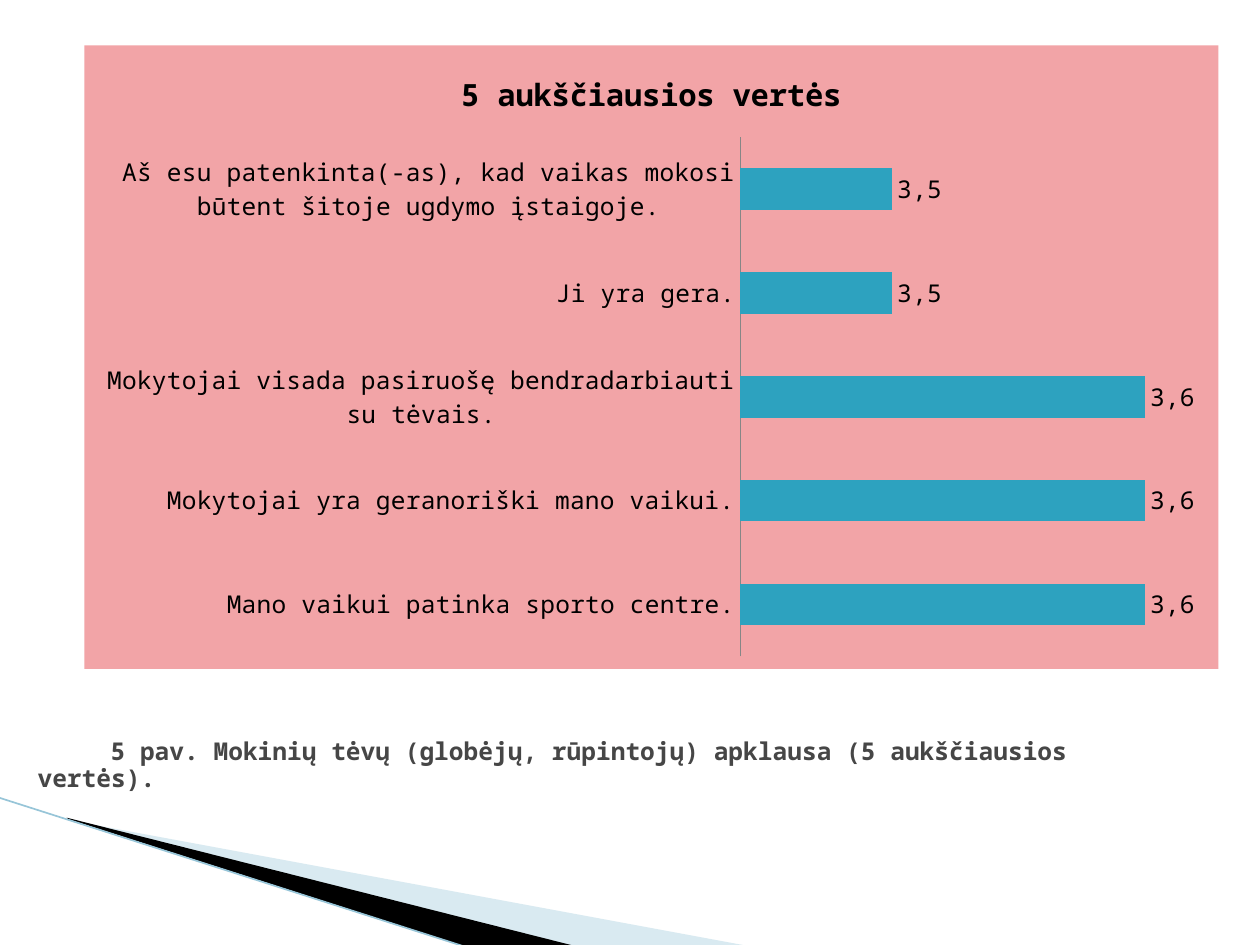
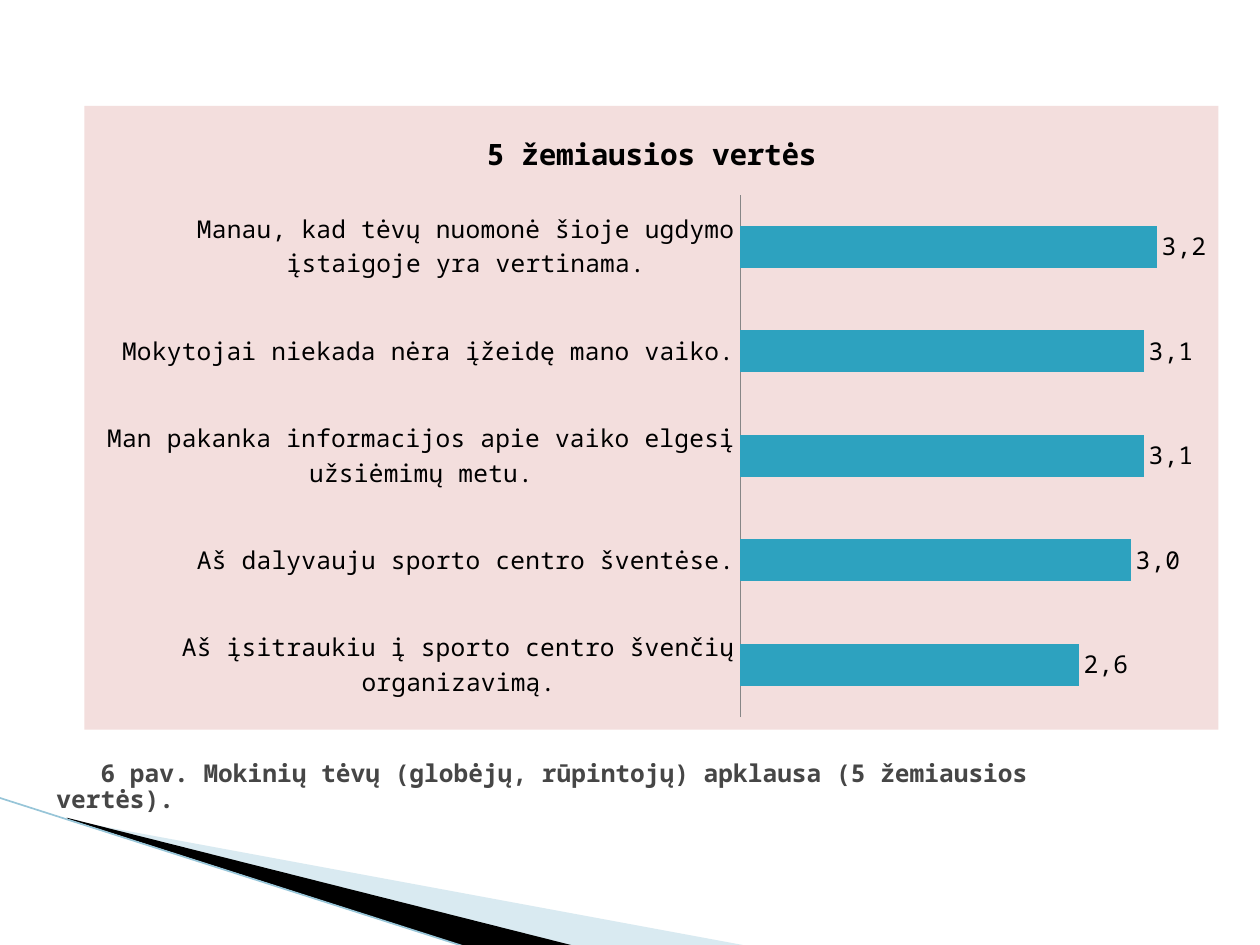
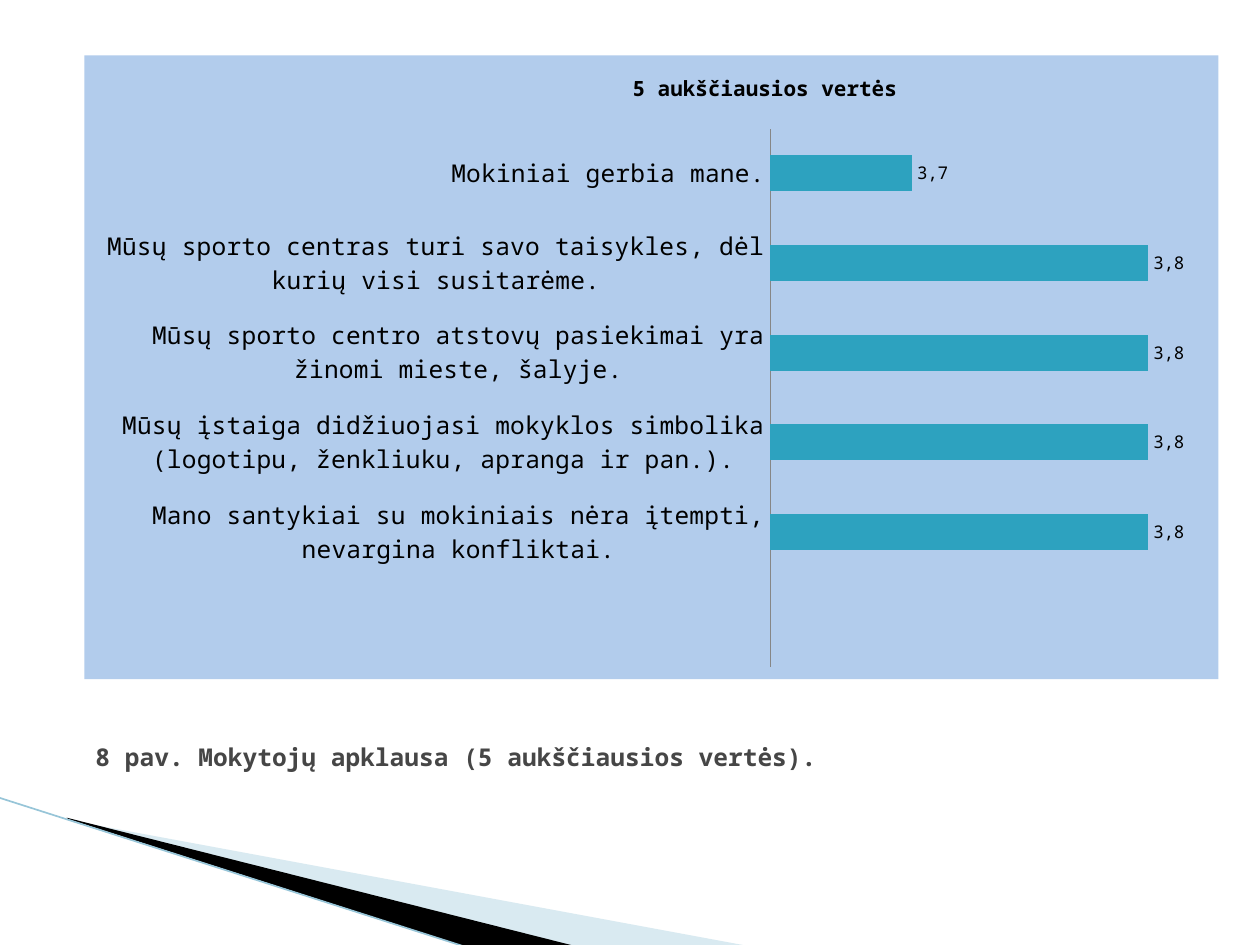
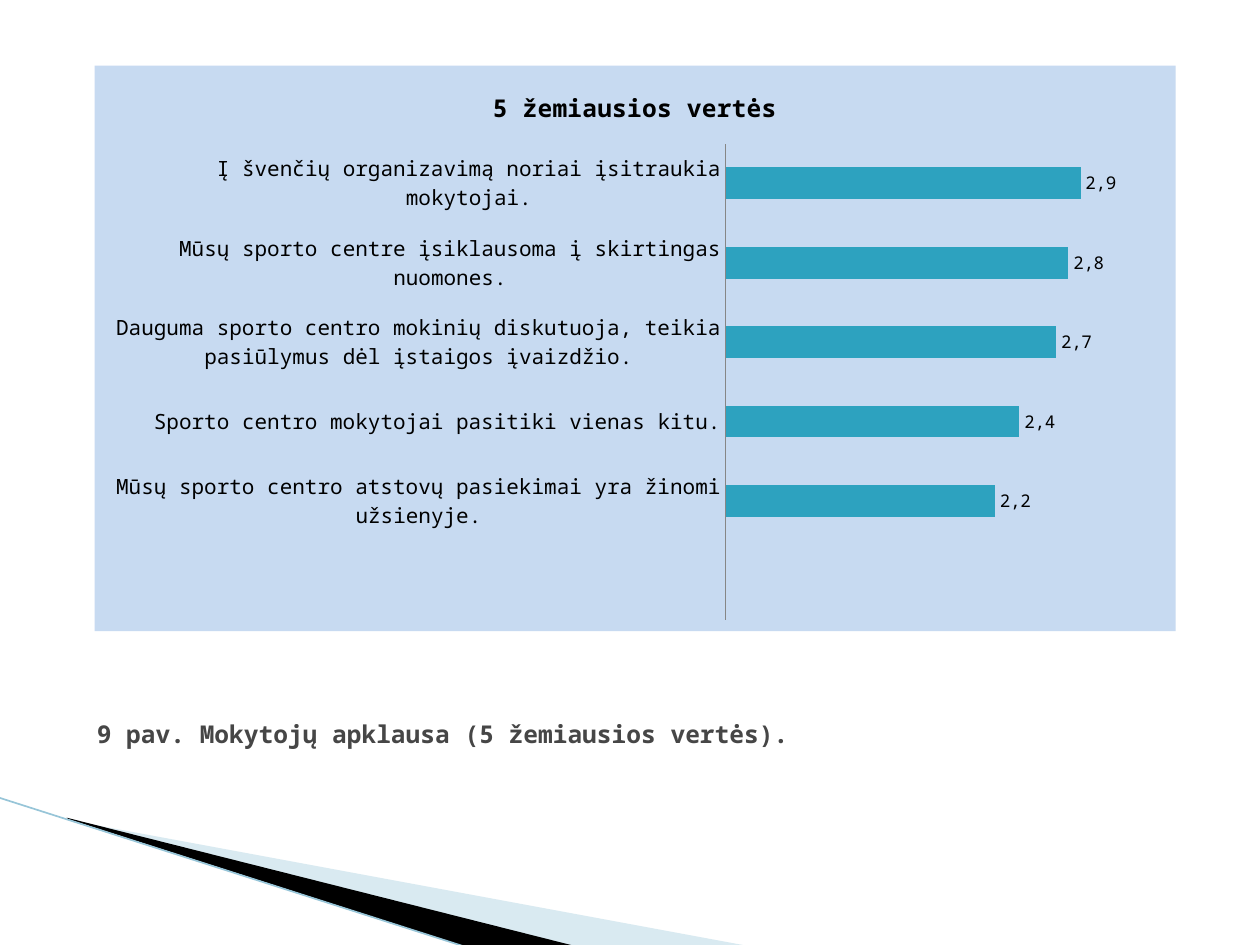
from pptx import Presentation
from pptx.chart.data import CategoryChartData
from pptx.dml.color import RGBColor
from pptx.enum.chart import XL_CHART_TYPE, XL_LABEL_POSITION, XL_TICK_MARK
from pptx.enum.shapes import MSO_CONNECTOR
from pptx.enum.text import MSO_ANCHOR
from pptx.oxml import parse_xml
from pptx.oxml.ns import nsdecls, qn
from pptx.util import Inches, Pt
from lxml.etree import SubElement

FONT = "Noto Sans Mono"
BLACK = RGBColor(0x00, 0x00, 0x00)
CAPTION_GREY = RGBColor(0x46, 0x46, 0x46)
AXIS_GREY = RGBColor(0x86, 0x86, 0x86)
BAR_TEAL = RGBColor(0x2D, 0xA2, 0xBF)
WEDGE_BLUE = RGBColor(0xA0, 0xCB, 0xDC)
EDGE_BLUE = RGBColor(0x97, 0xC5, 0xD8)
ROSE = RGBColor(0xF2, 0xA4, 0xA7)
PALE_ROSE = RGBColor(0xF3, 0xDE, 0xDD)
SKY = RGBColor(0xB2, 0xCC, 0xEC)
PALE_SKY = RGBColor(0xC7, 0xDA, 0xF1)

HIGHEST = "5 aukščiausios vertės"
LOWEST = "5 žemiausios vertės"

surveys = [
    dict(
        title=HIGHEST, title_size=17.5, title_place=None,
        chart_box=(0.67, 0.36, 9, 4.95), background=ROSE,
        answer_size=14, score_size=14, score_format="0.00%", scale=(0.0344, 0.0362),
        answers=[
            ("Mano vaikui patinka sporto centre.", 0.036),
            ("Mokytojai yra geranoriški mano vaikui.", 0.036),
            ("Mokytojai visada pasiruošę bendradarbiauti su tėvais.", 0.036),
            ("Ji yra gera.", 0.035),
            ("Aš esu patenkinta(-as), kad vaikas mokosi būtent šitoje ugdymo įstaigoje.", 0.035),
        ],
        caption="5 pav. Mokinių tėvų (globėjų, rūpintojų) apklausa (5 aukščiausios vertės).",
        caption_box=(0.2, 5.72, 9, 1.25), caption_indent=0.58, caption_lift=0.58,
    ),
    dict(
        title=LOWEST, title_size=16.8, title_place=None,
        chart_box=(0.67, 0.84, 9, 4.95), background=PALE_ROSE,
        answer_size=14, score_size=14, score_format="0%", scale=(0, 0.035),
        answers=[
            ("Aš įsitraukiu į sporto centro švenčių organizavimą.", 0.026),
            ("Aš dalyvauju sporto centro šventėse.", 0.030),
            ("Man pakanka informacijos apie vaiko elgesį užsiėmimų metu.", 0.031),
            ("Mokytojai niekada nėra įžeidę mano vaiko.", 0.031),
            ("Manau, kad tėvų nuomonė šioje ugdymo įstaigoje yra vertinama.", 0.032),
        ],
        caption="6 pav. Mokinių tėvų (globėjų, rūpintojų) apklausa (5 žemiausios vertės).",
        caption_box=(0.35, 5.95, 9, 1.25), caption_indent=0.35, caption_lift=0.7,
    ),
    dict(
        title=HIGHEST, title_size=12, title_place=(0.48, 0.02),
        chart_box=(0.67, 0.44, 9, 4.95), background=SKY,
        answer_size=14, score_size=10, score_format="0.00%", scale=(0.0364, 0.0382),
        answers=[
            ("", None),
            ("Mano santykiai su mokiniais nėra įtempti, nevargina konfliktai.", 0.038),
            ("Mūsų įstaiga didžiuojasi mokyklos simbolika (logotipu, ženkliuku, apranga ir pan.).", 0.038),
            ("Mūsų sporto centro atstovų pasiekimai yra žinomi mieste, šalyje.", 0.038),
            ("Mūsų sporto centras turi savo taisykles, dėl kurių visi susitarėme.", 0.038),
            ("Mokiniai gerbia mane.", 0.037),
        ],
        caption="8 pav. Mokytojų apklausa (5 aukščiausios vertės).",
        caption_box=(0.43, 5.72, 9, 1.25), caption_indent=0.23, caption_lift=0.7,
    ),
    dict(
        title=LOWEST, title_size=14, title_place=None,
        chart_box=(0.75, 0.52, 8.58, 4.49), background=PALE_SKY,
        answer_size=12, score_size=10, score_format="0.00%", scale=(0, 0.035),
        answers=[
            ("", None),
            ("Mūsų sporto centro atstovų pasiekimai yra žinomi užsienyje.", 0.022),
            ("Sporto centro mokytojai pasitiki vienas kitu.", 0.024),
            ("Dauguma sporto centro mokinių diskutuoja, teikia pasiūlymus dėl įstaigos įvaizdžio.", 0.027),
            ("Mūsų sporto centre įsiklausoma į skirtingas nuomones.", 0.028),
            ("Į švenčių organizavimą noriai įsitraukia mokytojai.", 0.029),
        ],
        caption="9 pav. Mokytojų apklausa (5 žemiausios vertės).",
        caption_box=(0.67, 5.25, 9, 1.41), caption_indent=0, caption_lift=0.28,
    ),
]


def style_font(font, size, color=BLACK, bold=False):
    font.name = FONT
    font.size = Pt(size)
    font.bold = bold
    font.color.rgb = color


prs = Presentation()
prs.slide_width = Inches(10)
prs.slide_height = Inches(7.5)
blank = prs.slide_layouts[6]
slides = [prs.slides.add_slide(blank) for _ in surveys]

wedges = [
    (WEDGE_BLUE, 40, [(0.55, 6.51), (5.95, 7.51), (4.56, 7.51), (0.55, 6.5)]),
    (BLACK, 100, [(0.53, 6.49), (4.57, 7.51), (3.72, 7.52), (0.54, 6.5)]),
]
for color, opacity, corners in wedges:
    points = [(Inches(x), Inches(y)) for x, y in corners]
    builder = slides[0].shapes.build_freeform(*points[0])
    builder.add_line_segments(points[1:], close=True)
    wedge = builder.convert_to_shape()
    wedge.shadow.inherit = False
    wedge.fill.solid()
    wedge.fill.fore_color.rgb = color
    wedge.line.fill.background()
    if opacity < 100:
        tint = wedge.element.spPr.find(qn("a:solidFill"))[0]
        SubElement(tint, qn("a:alpha"), val=str(opacity * 1000))
    blank.shapes.element.append(wedge.element)

edge = slides[0].shapes.add_connector(
    MSO_CONNECTOR.STRAIGHT, Inches(-0.01), Inches(6.33), Inches(3.71), Inches(7.52))
edge.line.color.rgb = EDGE_BLUE
edge.line.width = Pt(0.95)
SubElement(edge.element.spPr, qn("a:effectLst"))
blank.shapes.element.append(edge.element)

for slide, survey in zip(slides, surveys):
    scores = [score for _, score in survey["answers"]]
    data = CategoryChartData(number_format=survey["score_format"])
    data.categories = [answer for answer, _ in survey["answers"]]
    data.add_series("Series 1", scores)
    chart = slide.shapes.add_chart(
        XL_CHART_TYPE.BAR_CLUSTERED, *map(Inches, survey["chart_box"]), data).chart
    style_font(chart.font, survey["score_size"])
    chart.has_legend = False
    chart.element.find(qn("c:txPr")).addprevious(parse_xml(
        f'<c:spPr {nsdecls("c", "a")}><a:solidFill><a:srgbClr val="{survey["background"]}"/>'
        '</a:solidFill><a:ln><a:noFill/></a:ln></c:spPr>'))

    chart.has_title = True
    heading = chart.chart_title.text_frame.paragraphs[0].add_run()
    heading.text = survey["title"]
    style_font(heading.font, survey["title_size"], bold=True)
    if survey["title_place"]:
        x, y = survey["title_place"]
        chart.chart_title.element.find(qn("c:layout")).append(parse_xml(
            f'<c:manualLayout {nsdecls("c")}><c:xMode val="edge"/><c:yMode val="edge"/>'
            f'<c:x val="{x}"/><c:y val="{y}"/></c:manualLayout>'))

    answer_axis = chart.category_axis
    answer_axis.major_tick_mark = XL_TICK_MARK.NONE
    answer_axis.format.line.color.rgb = AXIS_GREY
    style_font(answer_axis.tick_labels.font, survey["answer_size"])
    score_axis = chart.value_axis
    score_axis.minimum_scale, score_axis.maximum_scale = survey["scale"]
    score_axis.has_major_gridlines = False
    score_axis.tick_labels.number_format = survey["score_format"]
    score_axis.tick_labels.number_format_is_linked = False
    score_axis.visible = False

    plot = chart.plots[0]
    plot.gap_width = 150
    plot.overlap = -25
    plot.vary_by_categories = False
    bars = plot.series[0]
    bars.format.fill.solid()
    bars.format.fill.fore_color.rgb = BAR_TEAL
    labels = bars.data_labels
    labels.show_value = True
    labels.number_format = survey["score_format"]
    labels.number_format_is_linked = False
    labels.position = XL_LABEL_POSITION.OUTSIDE_END
    style_font(labels.font, survey["score_size"])
    for index, score in enumerate(scores):
        if score is not None:
            label = bars.points[index].data_label
            score_run = label.text_frame.paragraphs[0].add_run()
            score_run.text = f"{score * 100:.1f}".replace(".", ",")
            style_font(score_run.font, survey["score_size"])
            label.position = XL_LABEL_POSITION.OUTSIDE_END

    caption = slide.shapes.add_textbox(*map(Inches, survey["caption_box"])).text_frame
    caption.word_wrap = True
    caption.vertical_anchor = MSO_ANCHOR.MIDDLE
    caption.margin_right = Inches(0.2)
    caption.margin_bottom = Inches(survey["caption_lift"])
    paragraph = caption.paragraphs[0]
    paragraph.line_spacing = 0.9
    paragraph._p.get_or_add_pPr().set("indent", str(Inches(survey["caption_indent"])))
    caption_run = paragraph.add_run()
    caption_run.text = survey["caption"]
    style_font(caption_run.font, 14, CAPTION_GREY, bold=True)

prs.save("out.pptx")
